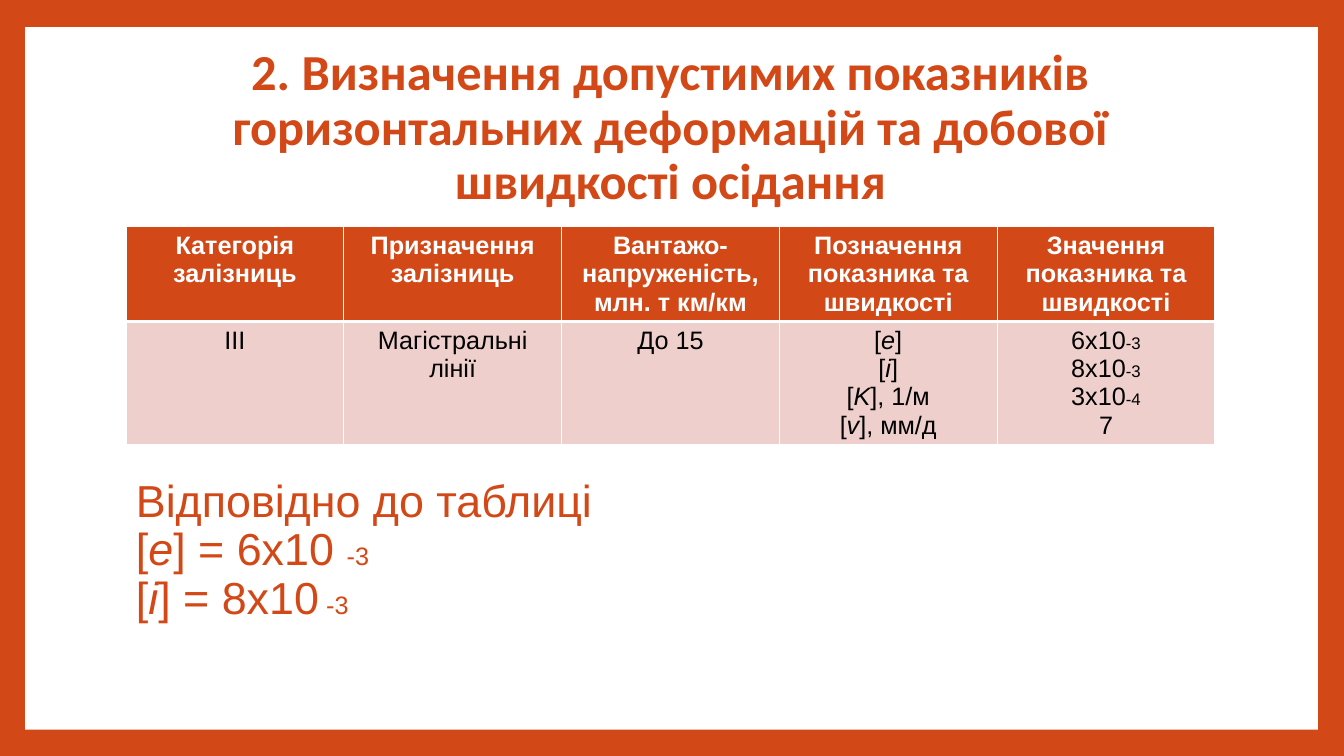
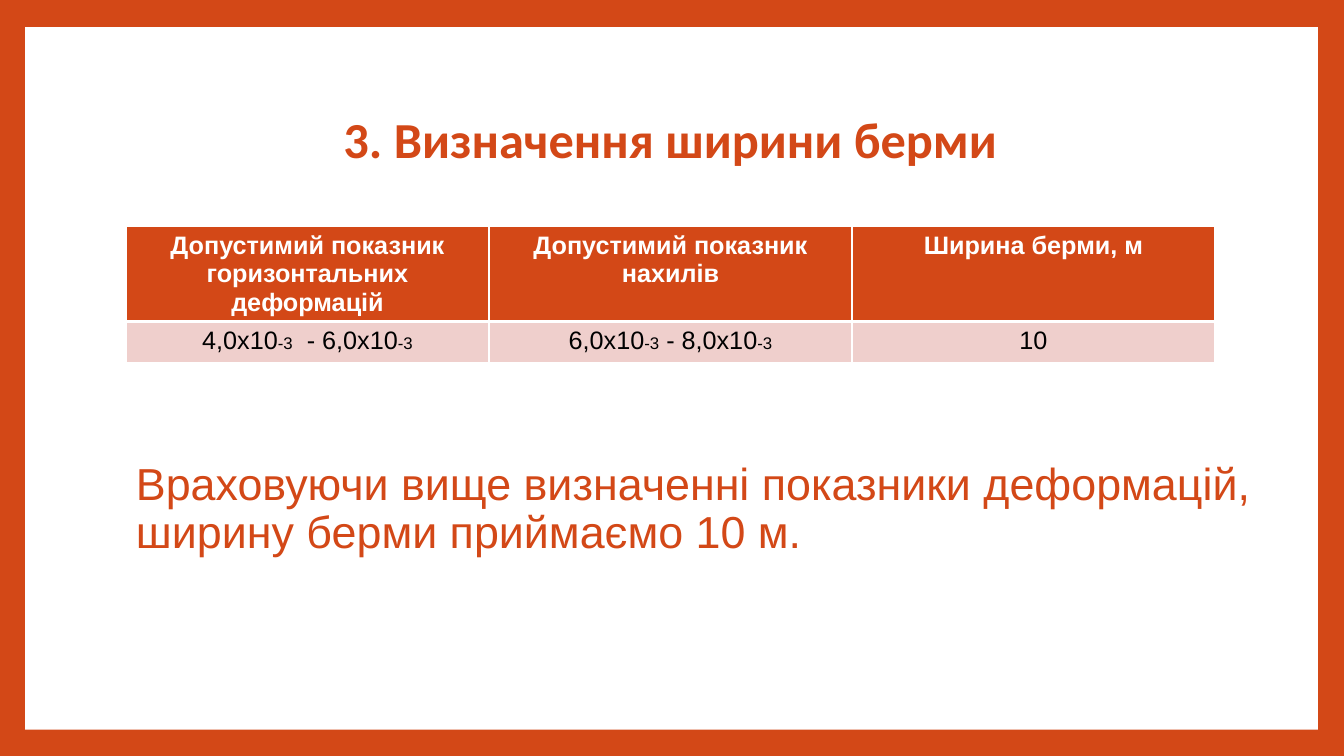
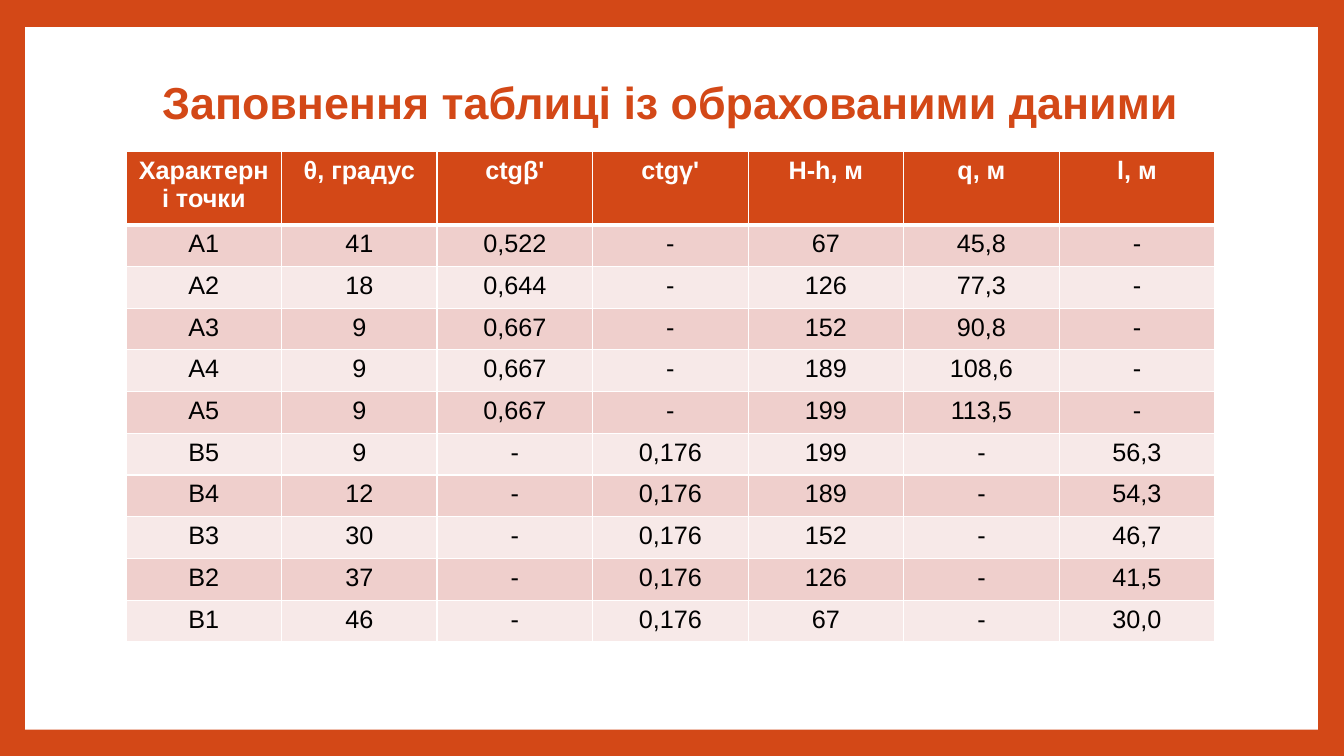
from lxml.etree import SubElement
from pptx import Presentation
from pptx.dml.color import RGBColor
from pptx.enum.shapes import MSO_SHAPE
from pptx.enum.text import MSO_ANCHOR, MSO_AUTO_SIZE, PP_ALIGN
from pptx.oxml.ns import qn
from pptx.util import Inches, Pt


def rgb(value):
    return RGBColor.from_string(value)


def italic(text):
    return text, {"italic": True}


def small(text, size=12):
    return text, {"size": size}


class Deck:
    ACCENT = "D34817"
    WHITE = "FFFFFF"
    BLACK = "000000"
    BANDS = ("EFCFCC", "F7E9E8")
    LEFT, WIDTH = 1.25, 10.8

    def __init__(self):
        self.prs = Presentation()
        self.prs.slide_width = Inches(13.33)
        self.prs.slide_height = Inches(7.5)
        fill = self.prs.slide_master.background.fill
        fill.solid()
        fill.fore_color.rgb = rgb(self.ACCENT)

    def add_slide(self):
        self.s = self.prs.slides.add_slide(self.prs.slide_layouts[5])
        self.panel()

    def panel(self):
        """Lay the white panel behind everything else on the slide."""
        sp = self.s.shapes.add_shape(MSO_SHAPE.RECTANGLE, Inches(0.25), Inches(0.27),
                                     Inches(12.82), Inches(6.97))
        sp.shadow.inherit = False
        sp.fill.solid()
        sp.fill.fore_color.rgb = rgb(self.WHITE)
        sp.line.fill.background()
        sp.element.getparent().insert(2, sp.element)

    def add_text(self, tf, paragraphs, size, color, font="Arial", bold=False,
                 align=PP_ALIGN.CENTER, spacing=None):
        """Fill a text frame; a paragraph is a string or a list of runs,
        and a run is a string or a pair of text and own settings."""
        for n, runs in enumerate(paragraphs):
            p = tf.add_paragraph() if n else tf.paragraphs[0]
            p.alignment = align
            if spacing:
                p.line_spacing = spacing
            for run in [runs] if isinstance(runs, str) else runs:
                text, own = (run, {}) if isinstance(run, str) else run
                r = p.add_run()
                r.text = text
                r.font.name = font
                r.font.size = Pt(own.get("size", size))
                r.font.bold = bold
                r.font.italic = own.get("italic", False)
                r.font.color.rgb = rgb(color)

    def title(self, text, top, height=1.48, size=36, font="Calibri"):
        sp = self.s.shapes.title
        sp.left, sp.top = Inches(self.LEFT), Inches(top)
        sp.width, sp.height = Inches(self.WIDTH), Inches(height)
        tf = sp.text_frame
        tf.auto_size = MSO_AUTO_SIZE.NONE
        tf.vertical_anchor = MSO_ANCHOR.MIDDLE
        self.add_text(tf, [text], size, self.ACCENT, font, bold=True, spacing=0.9)

    def body(self, paragraphs, top, width, height):
        sp = self.s.shapes.add_textbox(Inches(self.LEFT), Inches(top),
                                       Inches(width), Inches(height))
        tf = sp.text_frame
        tf.word_wrap = True
        self.add_text(tf, paragraphs, 32, self.ACCENT, align=PP_ALIGN.LEFT, spacing=0.9)

    def borders(self, cell, bottom):
        tc_pr = cell._tc.get_or_add_tcPr()
        for n, (side, width) in enumerate((("L", 1), ("R", 1), ("T", 1), ("B", bottom))):
            ln = SubElement(tc_pr, qn(f"a:ln{side}"), w=str(Pt(width)))
            SubElement(SubElement(ln, qn("a:solidFill")), qn("a:srgbClr"), val=self.WHITE)
            tc_pr.insert(n, ln)

    def table(self, rows, top, header_height, row_height):
        """Add a table; each cell is a list of paragraphs or one string."""
        cols = len(rows[0])
        height = header_height + row_height * (len(rows) - 1)
        table = self.s.shapes.add_table(len(rows), cols, Inches(self.LEFT), Inches(top),
                                        Inches(self.WIDTH), Inches(height)).table
        for col in table.columns:
            col.width = Inches(self.WIDTH / cols)
        for i, row in enumerate(rows):
            head = i == 0
            table.rows[i].height = Inches(header_height if head else row_height)
            for j, content in enumerate(row):
                cell = table.cell(i, j)
                cell.fill.solid()
                cell.fill.fore_color.rgb = rgb(self.ACCENT if head else self.BANDS[(i - 1) % 2])
                self.borders(cell, bottom=3 if head else 1)
                paragraphs = [content] if isinstance(content, str) else content
                self.add_text(cell.text_frame, paragraphs, 18,
                              self.WHITE if head else self.BLACK, bold=head)


def limits_slide(deck):
    deck.add_slide()
    deck.title("2. Визначення допустимих показників горизонтальних деформацій "
               "та добової швидкості осідання", 0.54)
    symbols = [["[", italic(name), "]" + unit] for name, unit in
               (("e", ""), ("i", ""), ("K", ", 1/м"), ("v", ", мм/д"))]
    values = [["6х10", small("-3")], ["8х10", small("-3")], ["3х10", small("-4")], "7"]
    deck.table([
        ["Категорія залізниць", "Призначення залізниць", "Вантажо-напруженість, млн. т км/км",
         "Позначення показника та швидкості", "Значення показника та швидкості"],
        ["III", "Магістральні лінії", "До 15", symbols, values],
    ], 2.25, 0.94, 1.22)
    deck.body(["Відповідно до таблиці",
               ["[", italic("e"), "] = 6х10 ", small("-3", 18)],
               ["[", italic("i"), "] = 8х10", small(" -3", 18)]], 4.7, deck.WIDTH, 1.6)


def berm_slide(deck):
    deck.add_slide()
    deck.title("3. Визначення ширини берми", 0.67)
    deck.table([
        ["Допустимий показник горизонтальних деформацій", "Допустимий показник нахилів",
         "Ширина берми, м"],
        [[["4,0х10", small("-3"), "  - 6,0х10", small("-3")]],
         [["6,0х10", small("-3"), " - 8,0х10", small("-3")]],
         "10"],
    ], 2.25, 0.94, 0.41)
    deck.body(["Враховуючи вище визначенні показники деформацій, "
               "ширину берми приймаємо 10 м."], 4.53, 11.45, 1.2)


def results_slide(deck):
    deck.add_slide()
    deck.title("Заповнення таблиці із обрахованими даними", 0.67, 0.74, 32, "Arial")
    header = ["Характерні точки", "θ, градус", "ctgβ'", "ctgγ'", "Н-h, м", "q, м", "l, м"]
    points = [
        ["А1", "41", "0,522", "-", "67", "45,8", "-"],
        ["А2", "18", "0,644", "-", "126", "77,3", "-"],
        ["А3", "9", "0,667", "-", "152", "90,8", "-"],
        ["А4", "9", "0,667", "-", "189", "108,6", "-"],
        ["А5", "9", "0,667", "-", "199", "113,5", "-"],
        ["В5", "9", "-", "0,176", "199", "-", "56,3"],
        ["В4", "12", "-", "0,176", "189", "-", "54,3"],
        ["В3", "30", "-", "0,176", "152", "-", "46,7"],
        ["В2", "37", "-", "0,176", "126", "-", "41,5"],
        ["В1", "46", "-", "0,176", "67", "-", "30,0"],
    ]
    header_height = 0.73
    deck.table([header] + points, 1.5, header_height, (4.87 - header_height) / len(points))


def main():
    deck = Deck()
    limits_slide(deck)
    berm_slide(deck)
    results_slide(deck)
    deck.prs.save("out.pptx")


if __name__ == "__main__":
    main()
